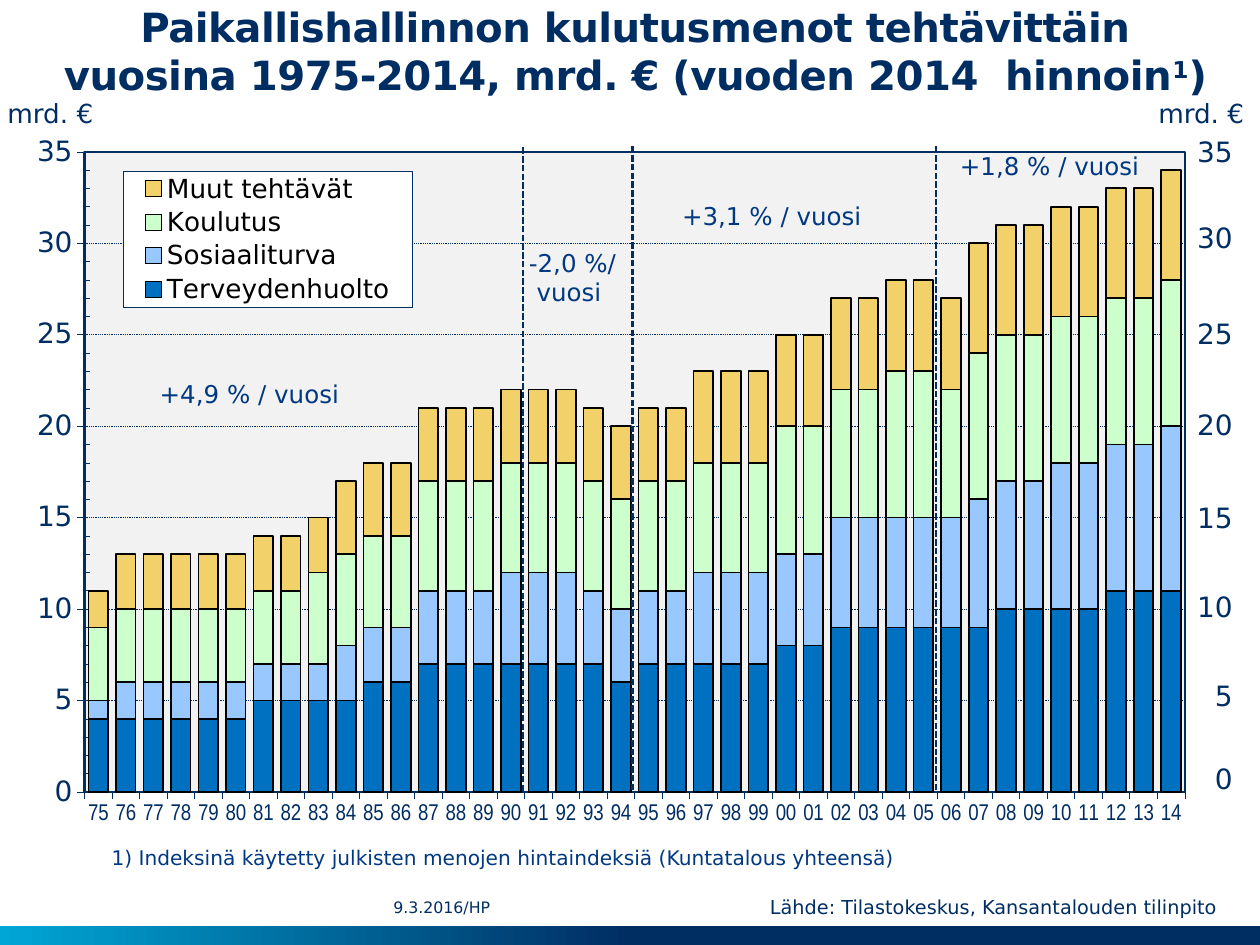
from dataclasses import dataclass

from lxml import etree
from pptx import Presentation
from pptx import util as u
from pptx.chart import data as cd
from pptx.dml.color import RGBColor
from pptx.enum import chart as ch, dml, shapes, text
from pptx.oxml import parse_xml
from pptx.oxml.ns import nsdecls, qn


@dataclass(frozen=True)
class Theme:
    """Colours, fonts and type sizes of the slide."""
    navy: str = "002E63"
    blue: str = "003882"
    cyan: str = "00A6D6"
    plot: str = "F2F2F2"
    white: str = "FFFFFF"
    black: str = "000000"
    series: tuple = ("0070C0", "98C8FF", "CCFFCC", "F3D16A")
    font: str = "DejaVu Sans"
    narrow: str = "Arial Narrow"
    title: float = 23
    scale: float = 16
    unit: float = 15
    growth: float = 14
    years: float = 13
    note: float = 11.5
    source: float = 11
    date: float = 9


T = Theme()
CHART_BOX = (0.3, 2.72, 23.8, 14.2)
LEGEND_BOX = (2.48, 3.45, 5.83, 2.74)
YEARS = [f"{y % 100:02d}" for y in range(1975, 2015)]
SPENDING = {
    "Terveydenhuolto": [
        4, 4, 4, 4, 4, 4, 5, 5, 5, 5, 6, 6, 7, 7, 7, 7, 7, 7, 7, 6,
        7, 7, 7, 7, 7, 8, 8, 9, 9, 9, 9, 9, 9, 10, 10, 10, 10, 11, 11, 11],
    "Sosiaaliturva": [
        1, 2, 2, 2, 2, 2, 2, 2, 2, 3, 3, 3, 4, 4, 4, 5, 5, 5, 4, 4,
        4, 4, 5, 5, 5, 5, 5, 6, 6, 6, 6, 6, 7, 7, 7, 8, 8, 8, 8, 9],
    "Koulutus": [
        4, 4, 4, 4, 4, 4, 4, 4, 5, 5, 5, 5, 6, 6, 6, 6, 6, 6, 6, 6,
        6, 6, 6, 6, 6, 7, 7, 7, 7, 8, 8, 7, 8, 8, 8, 8, 8, 8, 8, 8],
    "Muut tehtävät": [
        2, 3, 3, 3, 3, 3, 3, 3, 3, 4, 4, 4, 4, 4, 4, 4, 4, 4, 4, 4,
        4, 4, 5, 5, 5, 5, 5, 5, 5, 5, 5, 5, 6, 6, 6, 6, 6, 6, 6, 6],
}


def apply(obj, **values):
    """Set attributes from format values."""
    for name, value in values.items():
        setattr(obj, name, value)


def style_font(font, size, color=T.navy, name=T.font, bold=False):
    """Format a font."""
    apply(font, size=u.Pt(size), name=name, bold=bold)
    font.color.rgb = RGBColor.from_string(color)


def style_line(line, width, color=T.navy, dash=None):
    """Format a line."""
    line.color.rgb = RGBColor.from_string(color)
    apply(line, width=u.Pt(width), dash_style=dash)


def add_title(slide):
    """Fill and format the title placeholder."""
    sp = slide.shapes.title
    apply(sp, left=u.Cm(0.91), top=u.Cm(0.12), width=u.Cm(23.8), height=u.Cm(2))
    tf = sp.text_frame
    apply(tf, margin_left=0, margin_right=0, margin_top=u.Cm(0.13), margin_bottom=u.Cm(0.13),
          word_wrap=True, auto_size=text.MSO_AUTO_SIZE.NONE, vertical_anchor=text.MSO_ANCHOR.BOTTOM)
    p = tf.paragraphs[0]
    p.alignment = text.PP_ALIGN.CENTER
    parts = ("Paikallishallinnon kulutusmenot tehtävittäin",
             "vuosina 1975-2014, mrd. € (vuoden 2014  hinnoin", "1", ")")
    for i, part in enumerate(parts):
        if i == 1:
            p.add_line_break()
        r = p.add_run()
        r.text = part
        style_font(r.font, T.title, bold=True)
        rPr = r._r.get_or_add_rPr()
        rPr.set("spc", "-30")
        if part == "1":
            rPr.set("baseline", "30000")


def add_label(slide, box, content, size, color=T.navy, align=text.PP_ALIGN.LEFT):
    """Add an unwrapped text box, one paragraph per line."""
    sp = slide.shapes.add_textbox(*map(u.Cm, box))
    tf = sp.text_frame
    tf.text = content
    apply(tf, word_wrap=False, auto_size=text.MSO_AUTO_SIZE.SHAPE_TO_FIT_TEXT)
    for p in tf.paragraphs:
        p.alignment = align
        style_font(p.font, size, color)
    return tf


def add_divider(slide, x, top):
    """Add a dashed vertical line between periods."""
    line = slide.shapes.add_connector(shapes.MSO_CONNECTOR.STRAIGHT,
                                      u.Cm(x), u.Cm(top), u.Cm(x), u.Cm(top + 13))
    style_line(line.line, 1.25, dash=dml.MSO_LINE.SQUARE_DOT)
    etree.SubElement(line._element.spPr, qn("a:effectLst"))


def add_banner(slide):
    """Add the gradient strip along the bottom edge."""
    sp = slide.shapes.add_shape(shapes.MSO_SHAPE.RECTANGLE, 0, u.Cm(18.67), u.Cm(25.4), u.Cm(0.38))
    sp.shadow.inherit = False
    sp.line.fill.background()
    sp.fill.gradient()
    sp.fill.gradient_angle = 0
    for stop, color, position in zip(sp.fill.gradient_stops, (T.cyan, T.navy), (0, 0.5)):
        stop.color.rgb = RGBColor.from_string(color)
        stop.position = position


def layout_xml(x, y, w, h, inner=False):
    """Return a manual chart layout."""
    target = '<c:layoutTarget val="inner"/>' if inner else ""
    return parse_xml(
        f'<c:layout {nsdecls("c")}><c:manualLayout>{target}<c:xMode val="edge"/><c:yMode val="edge"/>'
        f'<c:x val="{x}"/><c:y val="{y}"/><c:w val="{w}"/><c:h val="{h}"/></c:manualLayout></c:layout>')


def panel_xml(fill, width):
    """Return a filled and outlined chart area format."""
    return parse_xml(
        f'<c:spPr {nsdecls("c", "a")}><a:solidFill><a:srgbClr val="{fill}"/></a:solidFill>'
        f'<a:ln w="{u.Pt(width)}"><a:solidFill><a:srgbClr val="{T.navy}"/></a:solidFill></a:ln></c:spPr>')


def format_axes(chart):
    """Format both axes and the gridlines."""
    cat, val = chart.category_axis, chart.value_axis
    apply(cat, major_tick_mark=ch.XL_TICK_MARK.OUTSIDE, has_major_gridlines=False)
    apply(val, minimum_scale=0, maximum_scale=35, major_unit=5, minor_unit=1,
          has_major_gridlines=True, major_tick_mark=ch.XL_TICK_MARK.OUTSIDE,
          minor_tick_mark=ch.XL_TICK_MARK.INSIDE)
    apply(val.tick_labels, number_format="0", number_format_is_linked=False)
    for axis, size, name in ((cat, T.years, T.narrow), (val, T.scale, T.font)):
        style_font(axis.tick_labels.font, size, name=name)
        style_line(axis.format.line, 0.31)
    style_line(val.major_gridlines.format.line, 0.5, dash=dml.MSO_LINE.ROUND_DOT)
    skip = parse_xml(f'<c:tickLblSkip {nsdecls("c")} val="1"/>')
    cat._element.find(qn("c:noMultiLvlLbl")).addprevious(skip)


def format_legend(chart):
    """Place the legend in a white panel inside the plot."""
    chart.has_legend = True
    apply(chart.legend, position=ch.XL_LEGEND_POSITION.RIGHT, include_in_layout=False)
    el = chart.legend._element
    for old in el.findall(qn("c:layout")):
        el.remove(old)
    left, top, width, height = CHART_BOX
    x, y, w, h = LEGEND_BOX
    layout = layout_xml((x - left) / width, (y - top) / height, w / width, h / height)
    el.find(qn("c:legendPos")).addnext(layout)
    el.append(panel_xml(T.white, 0.5))
    style_font(chart.legend.font, T.unit, T.black)


def add_spending_chart(slide):
    """Add the stacked columns of spending by task."""
    data = cd.CategoryChartData(number_format="0")
    data.categories = YEARS
    for name, values in SPENDING.items():
        data.add_series(name, values)
    chart = slide.shapes.add_chart(ch.XL_CHART_TYPE.COLUMN_STACKED, *map(u.Cm, CHART_BOX), data).chart
    chart.has_title = False
    style_font(chart.font, T.scale)
    plot = chart.plots[0]
    apply(plot, gap_width=40, overlap=100, vary_by_categories=False)
    for series, color in zip(plot.series, T.series):
        series.format.fill.solid()
        series.format.fill.fore_color.rgb = RGBColor.from_string(color)
        style_line(series.format.line, 1, T.black)
    format_axes(chart)
    format_legend(chart)
    area = chart._chartSpace.chart.plotArea
    for old in area.findall(qn("c:layout")):
        area.remove(old)
    area.insert(0, layout_xml(0.059, 0.024, 0.932, 0.909, inner=True))
    area.append(panel_xml(T.plot, 1.25))


def main():
    """Build and save the slide."""
    prs = Presentation()
    apply(prs, slide_width=u.Cm(25.4), slide_height=u.Cm(19.05))
    slide = prs.slides.add_slide(prs.slide_layouts[5])
    add_banner(slide)
    add_title(slide)
    add_spending_chart(slide)
    for left in (-0.1, 23.1):
        add_label(slide, (left, 1.83, 2.31, 0.89), "mrd. €", T.unit)
    tops = (15.23, 13.56, 11.76, 9.96, 8.1, 6.25, 4.32, 2.59)
    for i, top in enumerate(tops):
        value = str(5 * i)
        width = 0.48 + 0.38 * len(value)
        add_label(slide, (25.1 - width, top, width, 0.94), value, T.scale, align=text.PP_ALIGN.RIGHT)
    for x, top in ((10.54, 2.97), (12.75, 2.95), (18.87, 2.95)):
        add_divider(slide, x, top)
    for left, top, width, growth in ((2.97, 7.52, 4.34, "+4,9 % / vuosi"),
                                     (10.41, 2.0 + 2.87, 2.49, "-2,0 %/\n vuosi"),
                                     (13.5, 3.93, 4.34, "+3,1 % / vuosi"),
                                     (19.1, 2.92, 4.34, "+1,8 % / vuosi")):
        add_label(slide, (left, top, width, 0.86), growth, T.growth, T.blue)
    add_label(slide, (2, 16.92, 16.59, 0.74),
              "1) Indeksinä käytetty julkisten menojen hintaindeksiä (Kuntatalous yhteensä)", T.note, T.blue)
    add_label(slide, (15.27, 17.93, 10.03, 0.74), "Lähde: Tilastokeskus, Kansantalouden tilinpito", T.source)
    tf = add_label(slide, (7.65, 17.92, 2.51, 0.74), "9.3.2016/HP", T.date, align=text.PP_ALIGN.CENTER)
    apply(tf, margin_left=0, margin_right=0, margin_top=0, margin_bottom=0, word_wrap=True,
          auto_size=text.MSO_AUTO_SIZE.NONE, vertical_anchor=text.MSO_ANCHOR.MIDDLE)
    prs.save("out.pptx")


if __name__ == "__main__":
    main()
